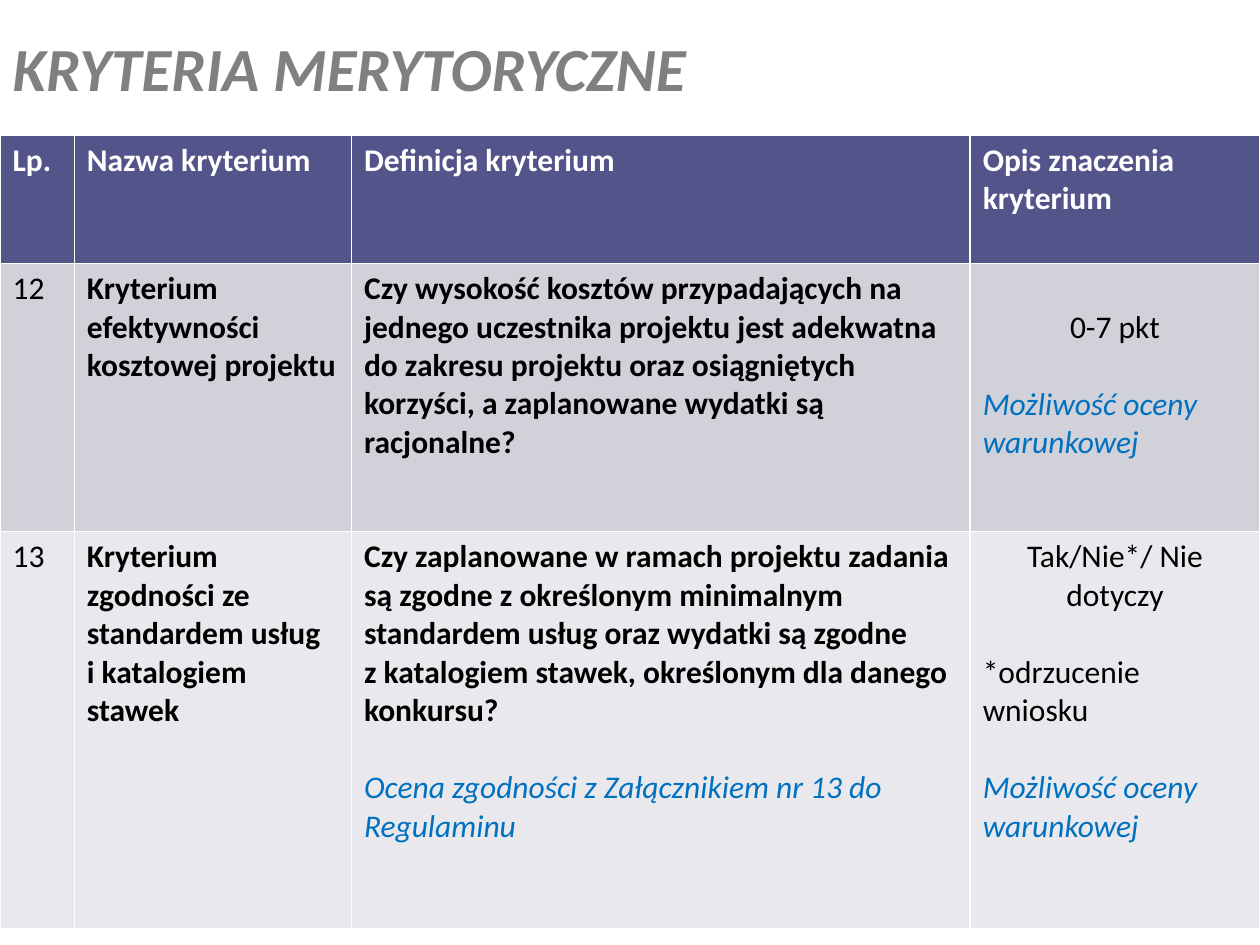
import pptx
import pptx.dml.color
import pptx.enum.text
import pptx.util

Inches = pptx.util.Inches
Pt = pptx.util.Pt
ALIGN = pptx.enum.text.PP_ALIGN
GAP = Pt(22)  # one text line

# Text formats
HEAD = {"size": Pt(18), "bold": True, "color": "FFFFFF"}
PLAIN = {"size": Pt(18), "bold": False, "color": "000000"}
STRONG = {**PLAIN, "bold": True}
NOTE = {**PLAIN, "italic": True, "color": "0070C0"}
TITLE = {"size": Pt(35), "bold": True, "italic": True, "color": "808080"}

# Table grid and row fills
COLS = [0.59, 2.2, 4.91, 2.3]
ROWS = [1.02, 2.13, 3.15]
FILLS = ["53548A", "D1D1DA", "E9E9ED"]

# Each cell is a list of paragraphs: text, format, alignment
LEFT, MID = ALIGN.LEFT, ALIGN.CENTER
CELLS = [
    [[(name, HEAD, LEFT)] for name in (
        "Lp.", "Nazwa kryterium", "Definicja kryterium",
        "Opis znaczenia kryterium")],
    [
        [("12", PLAIN, LEFT)],
        [("Kryterium efektywności kosztowej projektu", STRONG, LEFT)],
        [("Czy wysokość kosztów przypadających na jednego uczestnika "
          "projektu jest adekwatna do zakresu projektu oraz osiągniętych "
          "korzyści, a zaplanowane wydatki są racjonalne?", STRONG, LEFT)],
        [("0-7 pkt", PLAIN, MID),
         ("Możliwość oceny warunkowej", NOTE, LEFT)],
    ],
    [
        [("13", PLAIN, LEFT)],
        [("Kryterium zgodności ze standardem usług \v"
          "i katalogiem stawek", STRONG, LEFT)],
        [("Czy zaplanowane w ramach projektu zadania są zgodne "
          "z określonym minimalnym standardem usług oraz wydatki są zgodne \v"
          "z katalogiem stawek, określonym dla danego konkursu?",
          STRONG, LEFT),
         ("Ocena zgodności z Załącznikiem nr 13 do Regulaminu", NOTE, LEFT)],
        [("Tak/Nie*/ Nie dotyczy", PLAIN, MID),
         ("*odrzucenie wniosku", PLAIN, LEFT),
         ("Możliwość oceny warunkowej", NOTE, LEFT)],
    ],
]


def paint(target, shade):
    target.rgb = pptx.dml.color.RGBColor.from_string(shade)


def style(font, form):
    font.name = "Calibri"
    for key, value in form.items():
        if key == "color":
            paint(font.color, value)
        else:
            setattr(font, key, value)


def write(frame, parts):
    """Write paragraphs with one line of space between them."""
    for i, (text, form, align) in enumerate(parts):
        para = frame.add_paragraph() if i else frame.paragraphs[0]
        para.text = text
        para.alignment = align
        para.space_before = GAP if i else Pt(0)
        for run in para.runs:
            style(run.font, form)


def add_title(slide, text):
    title = slide.shapes.title
    title.left, title.top = Inches(0), Inches(0)
    title.width, title.height = Inches(9.5), Inches(1.07)
    frame = title.text_frame
    frame.auto_size = pptx.enum.text.MSO_AUTO_SIZE.NONE
    frame.vertical_anchor = pptx.enum.text.MSO_ANCHOR.MIDDLE
    write(frame, [(text, TITLE, LEFT)])


def add_grid(slide):
    table = slide.shapes.add_table(
        len(ROWS), len(COLS), Inches(0), Inches(1.07),
        Inches(sum(COLS)), Inches(sum(ROWS))).table
    for col, width in zip(table.columns, COLS):
        col.width = Inches(width)
    for r, high in enumerate(ROWS):
        table.rows[r].height = Inches(high)
        for c, parts in enumerate(CELLS[r]):
            cell = table.cell(r, c)
            cell.fill.solid()
            paint(cell.fill.fore_color, FILLS[r])
            write(cell.text_frame, parts)
    # The score sits one line below the top of its cell
    table.cell(1, 3).margin_top = Inches(0.05) + GAP


def main():
    deck = pptx.Presentation()
    deck.slide_width, deck.slide_height = Inches(10), Inches(7.5)
    slide = deck.slides.add_slide(deck.slide_layouts[5])
    add_title(slide, "KRYTERIA MERYTORYCZNE")
    add_grid(slide)
    deck.save("out.pptx")


if __name__ == "__main__":
    main()
